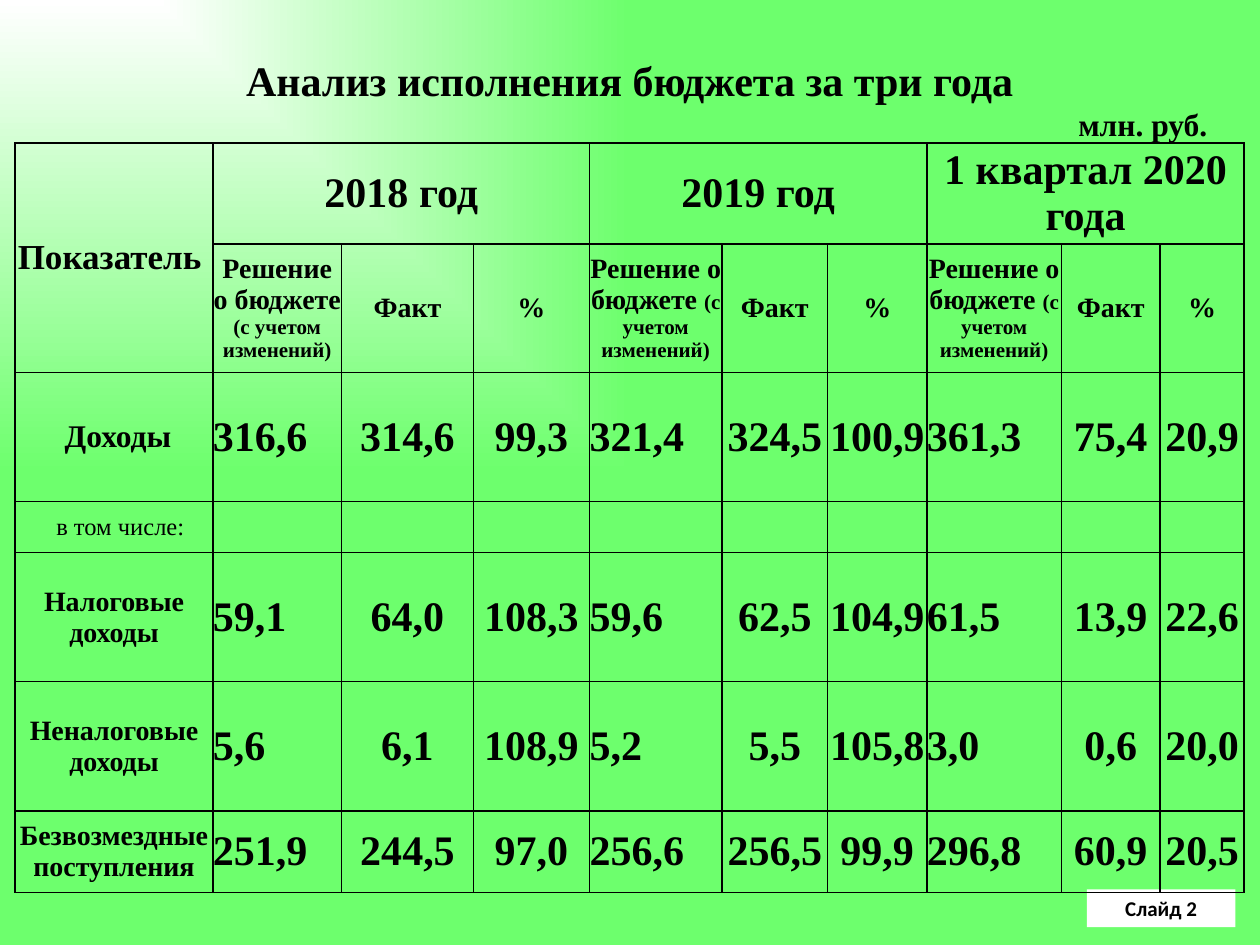
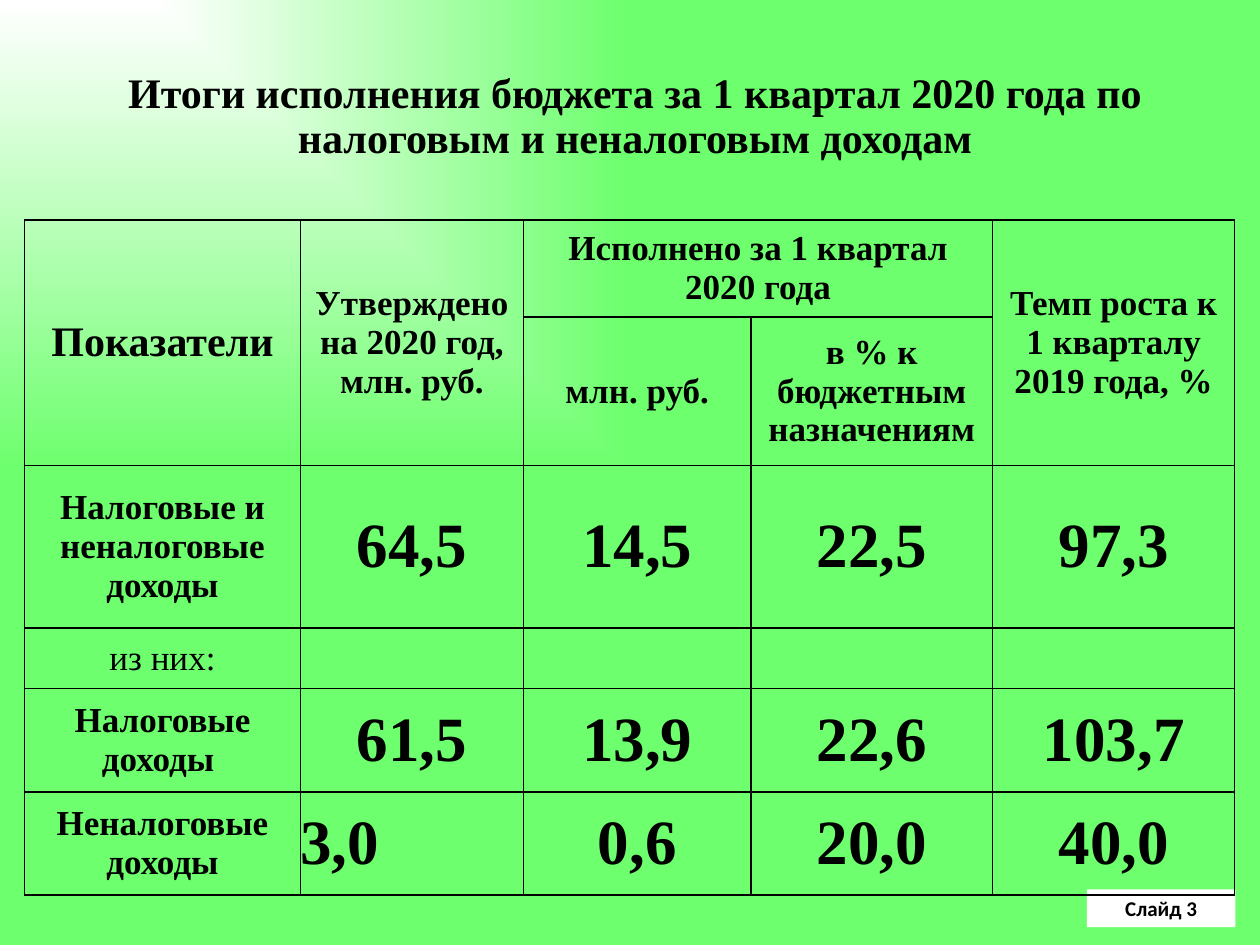
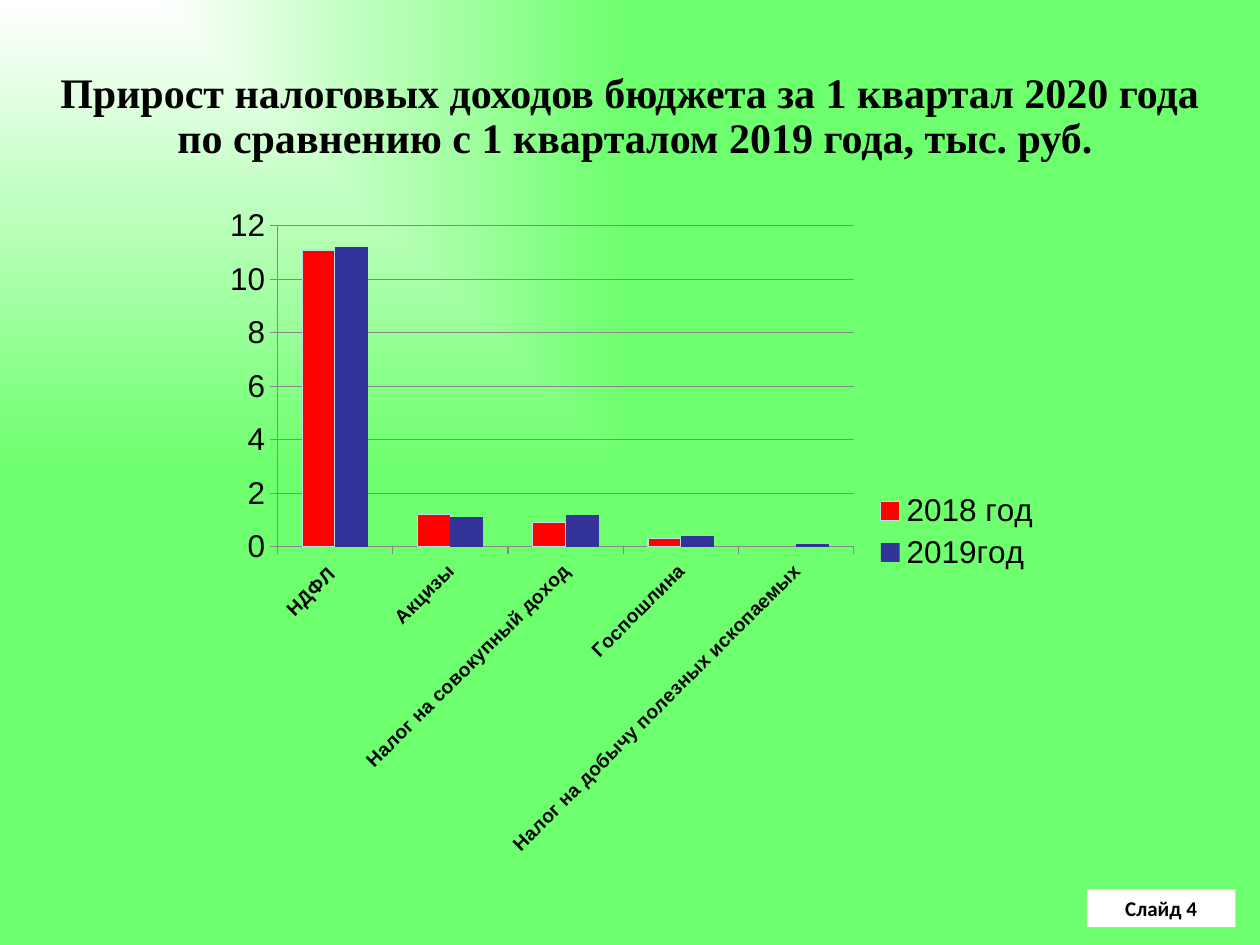
from lxml.etree import SubElement
from pptx import Presentation
from pptx.chart.data import CategoryChartData
from pptx.dml.color import RGBColor
from pptx.enum.chart import XL_CHART_TYPE, XL_LEGEND_POSITION, XL_TICK_MARK
from pptx.enum.shapes import MSO_SHAPE
from pptx.enum.text import MSO_ANCHOR, MSO_AUTO_SIZE, PP_ALIGN
from pptx.oxml import parse_xml
from pptx.oxml.ns import nsdecls, qn
from pptx.util import Inches, Pt

COLUMNS, ROWS = 100, 75
WIDTH, HEIGHT = Inches(10), Inches(7.5)
WHITE, GREEN, BLACK, GRAY = "FFFFFF", "6DFF6D", "000000", "888888"
RED, NAVY, PALE_BLUE = "FF0000", "333399", "BBE0E3"
SERIF, SANS, LABEL_FONT = "Times New Roman", "Arial", "Calibri"
TITLE_ONLY = 5

THREE_YEAR_WIDTHS = [15.7, 10.22, 10.45, 9.23, 10.5, 8.4, 7.87, 10.7, 7.8, 6.7]
THREE_YEAR_HEIGHTS = [8, 10.2, 10.25, 3.95, 10.25, 10.25, 6.5]
PERIODS = ["2018 год", "2019 год", "1 квартал 2020 года"]
THREE_YEAR_ROWS = [
    (2, " Доходы", 18, "316,6 314,6 99,3 321,4 324,5 100,9 361,3 75,4 20,9"),
    (4, "Налоговые доходы", 16, "59,1 64,0 108,3 59,6 62,5 104,9 61,5 13,9 22,6"),
    (5, "Неналоговые доходы", 16, "5,6 6,1 108,9 5,2 5,5 105,8 3,0 0,6 20,0"),
    (6, "Безвозмездные поступления", 16,
     "251,9 244,5 97,0 256,6 256,5 99,9 296,8 60,9 20,5"),
]

QUARTER_WIDTHS = [21.9, 17.7, 18.05, 19.2, 19.2]
QUARTER_HEIGHTS = [7.7, 11.8, 12.9, 4.8, 8.2, 8.2]
QUARTER_ROWS = [
    (2, "Налоговые и неналоговые доходы", "64,5 14,5 22,5 97,3"),
    (4, "Налоговые доходы ", "61,5 13,9 22,6 103,7"),
    (5, "Неналоговые доходы", "3,0 0,6 20,0 40,0"),
]

TAXES = ["НДФЛ ", "Акцизы", "Налог на совокупный доход", "Госпошлина",
         "Налог на добычу полезных ископаемых"]
TAX_SERIES = [
    ("2018 год", [11.1, 1.2, 0.9, 0.3, None], RED, PALE_BLUE),
    ("2019год", [11.2, 1.1, 1.2, 0.4, 0.1], NAVY, None),
]


def rgb(color):
    """Turn a hex string into a colour."""
    return RGBColor.from_string(color)


def across(columns):
    """Length of a number of grid columns."""
    return int(WIDTH * columns / COLUMNS)


def down(rows):
    """Length of a number of grid rows."""
    return int(HEIGHT * rows / ROWS)


def area(left, top, width, height):
    """Place and size of an element on the grid."""
    return across(left), down(top), across(width), down(height)


def format_font(font, *, size, name=SERIF, bold=True, color=BLACK):
    """Set the look of a font."""
    font.name, font.size, font.bold = name, Pt(size), bold
    font.color.rgb = rgb(color)


def write(frame, text, *, size, name=SERIF, bold=True, align=PP_ALIGN.CENTER,
          spacing=None, before=None, note="", note_size=12):
    """Write lines of formatted text, with an optional smaller note at the end."""
    frame.word_wrap = True
    for index, line in enumerate(text.split("\n")):
        paragraph = frame.add_paragraph() if index else frame.paragraphs[0]
        paragraph.alignment = align
        paragraph.line_spacing = spacing
        paragraph.space_before = before
        run = paragraph.add_run()
        run.text = line
        format_font(run.font, size=size, name=name, bold=bold)
    if note:
        run = paragraph.add_run()
        run.text = note
        format_font(run.font, size=note_size, name=name, bold=bold)


def set_background(master):
    """Give the master a gradient that spreads from the top left corner."""
    fill = master.background.fill
    fill.gradient()
    for stop, color, position in zip(fill.gradient_stops, (WHITE, GREEN), (0, 1)):
        stop.color.rgb = rgb(color)
        stop.position = position
    gradient = master.element.find(".//" + qn("a:gradFill"))
    gradient.remove(gradient.find(qn("a:lin")))
    spread = SubElement(gradient, qn("a:path"), path="rect")
    SubElement(spread, qn("a:fillToRect"), l="0", t="0", r="100000", b="100000")


def add_slide(presentation, number, title, *, height=8.3, spacing=0.9, before=Pt(0)):
    """Add a slide with its title and its number label."""
    slide = presentation.slides.add_slide(presentation.slide_layouts[TITLE_ONLY])
    heading = slide.shapes.title
    heading.left, heading.top, heading.width, heading.height = area(1.95, 5.2, 96.9, height)
    heading.text_frame.auto_size = MSO_AUTO_SIZE.NONE
    heading.text_frame.vertical_anchor = MSO_ANCHOR.TOP
    write(heading.text_frame, title, size=24, spacing=spacing, before=before)

    label = slide.shapes.add_shape(MSO_SHAPE.RECTANGLE, *area(86.25, 70.6, 11.8, 3))
    label.shadow.inherit = False
    label.fill.solid()
    label.fill.fore_color.rgb = rgb(WHITE)
    label.line.fill.background()
    write(label.text_frame, f"Слайд {number}", size=12, name=LABEL_FONT)
    return slide


def add_borders(cell):
    """Draw a thin black line on each side of a cell."""
    properties = cell._tc.get_or_add_tcPr()
    for index, side in enumerate("LRTB"):
        properties.insert(index, parse_xml(
            f'<a:ln{side} {nsdecls("a")} w="12700"><a:solidFill>'
            f'<a:srgbClr val="{BLACK}"/></a:solidFill></a:ln{side}>'))


def add_grid_table(slide, left, top, widths, heights):
    """Add an empty table with borders and no fill."""
    frame = slide.shapes.add_table(
        len(heights), len(widths), *area(left, top, sum(widths), sum(heights)))
    table = frame.table
    table.first_row = table.horz_banding = False
    for column, width in zip(table.columns, widths):
        column.width = across(width)
    for row, height in zip(table.rows, heights):
        row.height = down(height)
    for cell in table.iter_cells():
        cell.fill.background()
        add_borders(cell)
    return table


def fill_cell(table, row, column, text, *, end=None, margins=(0, 0), indent=0, **style):
    """Write a cell, merged as far as the end cell if there is one."""
    cell = table.cell(row, column)
    if end:
        cell.merge(table.cell(*end))
    side, edge = margins
    cell.margin_left = across(side + indent)
    cell.margin_right = across(side)
    cell.margin_top = cell.margin_bottom = down(edge)
    cell.vertical_anchor = MSO_ANCHOR.MIDDLE
    write(cell.text_frame, text, **style)


def build_three_years(presentation):
    """Build the slide that compares three years."""
    slide = add_slide(presentation, 2, "Анализ исполнения бюджета за три года ",
                      height=3.4, spacing=0.6, before=Pt(4.4))
    table = add_grid_table(slide, 1.2, 11.35, THREE_YEAR_WIDTHS, THREE_YEAR_HEIGHTS)
    fill_cell(table, 0, 0, "Показатель ", end=(1, 0), size=20)
    for index, period in enumerate(PERIODS):
        first = 1 + 3 * index
        fill_cell(table, 0, first, period, end=(0, first + 2), size=24)
        fill_cell(table, 1, first, "Решение о бюджете ", size=16,
                  note="(с учетом изменений)")
        fill_cell(table, 1, first + 1, "Факт", size=16)
        fill_cell(table, 1, first + 2, "%", size=16)
    fill_cell(table, 3, 0, "в том числе:", size=14, bold=False, indent=1)
    for row, name, size, values in THREE_YEAR_ROWS:
        fill_cell(table, row, 0, name, size=size)
        for column, value in enumerate(values.split(), 1):
            align = PP_ALIGN.LEFT if column % 3 == 1 else PP_ALIGN.CENTER
            fill_cell(table, row, column, value, size=24, align=align)
    unit = slide.shapes.add_textbox(*area(83.6, 7.85, 14.2, 4))
    write(unit.text_frame, "млн. руб.", size=18)


def build_quarter(presentation):
    """Build the slide with the results of the quarter."""
    slide = add_slide(presentation, 3, "Итоги исполнения бюджета за 1 квартал 2020 года "
                      "по налоговым и неналоговым доходам")
    table = add_grid_table(slide, 1.95, 17.45, QUARTER_WIDTHS, QUARTER_HEIGHTS)
    padding = (1, 0.5)
    headers = [
        (0, 0, "Показатели", (1, 0), 24),
        (0, 1, "Утверждено на 2020 год, млн. руб.", (1, 1), 20),
        (0, 2, "Исполнено за 1 квартал 2020 года", (0, 3), 20),
        (0, 4, "Темп роста к 1 кварталу 2019 года, %", (1, 4), 20),
        (1, 2, "млн. руб.", None, 20),
        (1, 3, "в % к бюджетным назначениям", None, 20),
    ]
    for row, column, text, end, size in headers:
        fill_cell(table, row, column, text, end=end, size=size, margins=padding)
    fill_cell(table, 3, 0, "из них:", size=20, bold=False, margins=padding)
    for row, name, values in QUARTER_ROWS:
        fill_cell(table, row, 0, name, size=20, margins=padding)
        for column, value in enumerate(values.split(), 1):
            flush = (row, column) == (5, 1)
            fill_cell(table, row, column, value, size=36,
                      margins=(0, 0) if flush else padding,
                      align=PP_ALIGN.LEFT if flush else PP_ALIGN.CENTER)


def format_line(line, color):
    """Set a thin line in a colour."""
    line.color.rgb = rgb(color)
    line.width = Pt(0.75)


def format_axis(axis, *, size, bold):
    """Set the line, tick marks and labels of an axis."""
    axis.major_tick_mark = XL_TICK_MARK.OUTSIDE
    axis.minor_tick_mark = XL_TICK_MARK.NONE
    format_line(axis.format.line, GRAY)
    format_font(axis.tick_labels.font, size=size, name=SANS, bold=bold)


def add_tax_chart(slide):
    """Add the columns of tax income by kind of tax."""
    data = CategoryChartData()
    data.categories = TAXES
    for name, values, _, _ in TAX_SERIES:
        data.add_series(name, values)
    chart = slide.shapes.add_chart(
        XL_CHART_TYPE.COLUMN_CLUSTERED, *area(16.93, 15.45, 66.7, 53.5), data).chart
    chart.has_title = False
    format_font(chart.font, size=18, name=SANS, bold=False)
    chart.has_legend = True
    chart.legend.position = XL_LEGEND_POSITION.RIGHT
    chart.legend.include_in_layout = False
    format_font(chart.legend.font, size=18, name=SANS, bold=False)

    format_axis(chart.category_axis, size=11, bold=True)
    format_axis(chart.value_axis, size=18, bold=False)
    format_line(chart.value_axis.major_gridlines.format.line, GRAY)
    for body in chart.element.xpath(".//c:catAx/c:txPr/a:bodyPr"):
        body.set("rot", "-2700000")
        body.set("vert", "horz")

    plot = chart.plots[0]
    plot.vary_by_categories = False
    plot.gap_width, plot.overlap = 150, 0
    for series, (_, _, color, outline) in zip(plot.series, TAX_SERIES):
        series.format.fill.solid()
        series.format.fill.fore_color.rgb = rgb(color)
        if outline:
            format_line(series.format.line, outline)


def build_growth(presentation):
    """Build the slide on the growth of tax income."""
    slide = add_slide(presentation, 4,
                      "Прирост налоговых доходов бюджета за 1 квартал 2020 года \n"
                      "по сравнению с 1 кварталом 2019 года, тыс. руб.")
    add_tax_chart(slide)


def main():
    """Build the presentation and save it."""
    presentation = Presentation()
    presentation.slide_width, presentation.slide_height = WIDTH, HEIGHT
    set_background(presentation.slide_master)
    build_three_years(presentation)
    build_quarter(presentation)
    build_growth(presentation)
    presentation.save("out.pptx")


if __name__ == "__main__":
    main()
